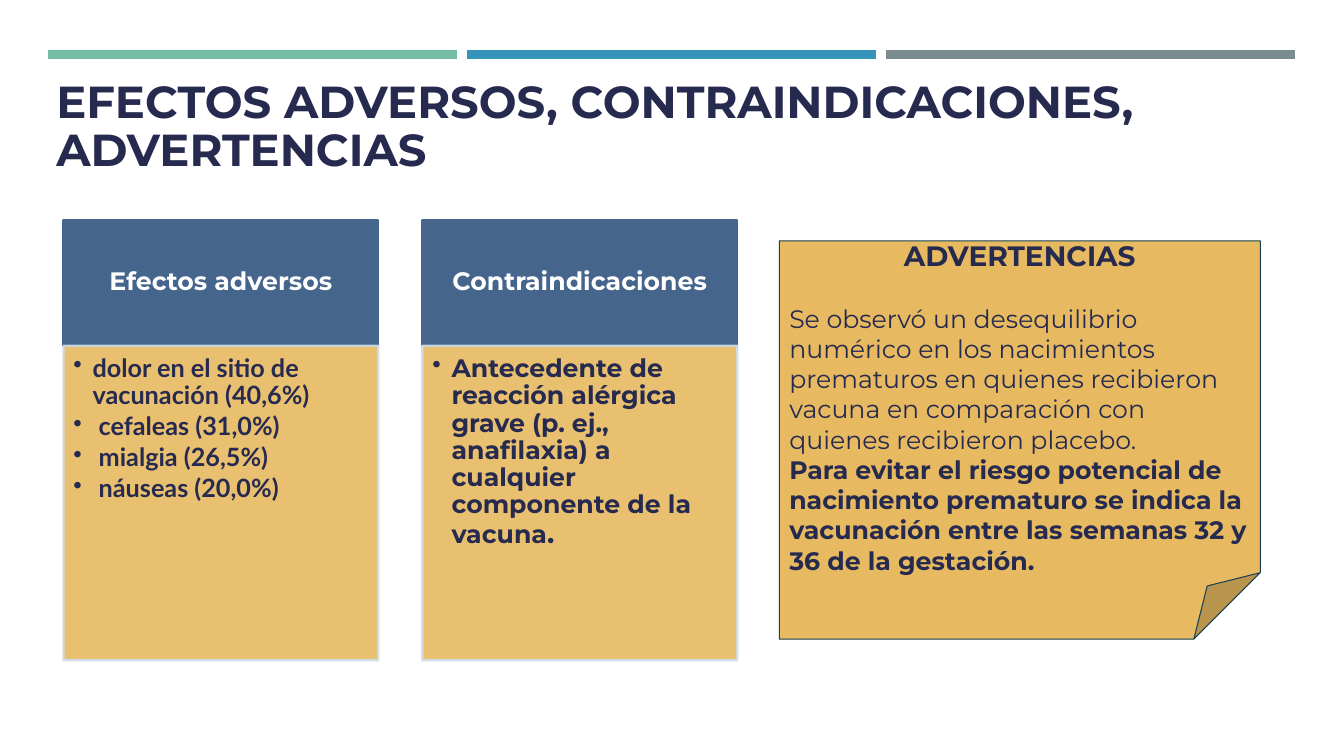
from dataclasses import dataclass

from lxml import etree
from pptx import Presentation
from pptx.dml.color import RGBColor
from pptx.enum.shapes import MSO_CONNECTOR, MSO_SHAPE
from pptx.enum.text import MSO_ANCHOR, PP_ALIGN
from pptx.oxml.ns import qn
from pptx.util import Inches, Pt

STRAIGHT = MSO_CONNECTOR.STRAIGHT
RECTANGLE = MSO_SHAPE.RECTANGLE
FOLDED_CORNER = MSO_SHAPE.FOLDED_CORNER
TOP, MIDDLE = MSO_ANCHOR.TOP, MSO_ANCHOR.MIDDLE
LEFT, CENTER = PP_ALIGN.LEFT, PP_ALIGN.CENTER


@dataclass(frozen=True)
class Theme:
    ink: str = "262A4F"
    white: str = "FFFFFF"
    header: str = "45658D"
    sand: str = "E7BA61"
    card_edge: str = "CEDCE7"
    note_edge: str = "174152"
    bars: tuple = ("75BDA7", "3494BA", "7A8C8E")
    font: str = "Montserrat"
    list_font: str = "Lato"
    title_size: int = 32
    lead_size: int = 20
    body_size: int = 18


THEME = Theme()

TITLE = "EFECTOS ADVERSOS, CONTRAINDICACIONES, ADVERTENCIAS"
CARDS = [
    ("Efectos adversos", THEME.list_font, [
        [("dolor en el sitio de vacunación (40,6%)", THEME.body_size)],
        [(" cefaleas (31,0%)", THEME.body_size)],
        [(" mialgia (26,5%)", THEME.body_size)],
        [(" náuseas (20,0%)", THEME.body_size)],
    ]),
    ("Contraindicaciones", THEME.font, [
        [("Antecedente de reacción alérgica grave (p. ej., anafilaxia) "
          "a cualquier componente de la vacuna", THEME.body_size),
         (".", THEME.lead_size)],
    ]),
]
WARNING_TITLE = "ADVERTENCIAS"
WARNING_FINDING = ("Se observó un desequilibrio numérico en los nacimientos prematuros en quienes "
                   "recibieron vacuna en comparación con quienes recibieron placebo.")
WARNING_ADVICE = ("Para evitar el riesgo potencial de nacimiento prematuro se indica la "
                  "vacunación entre las semanas 32 y 36 de la gestación.")


def color(value):
    return RGBColor.from_string(value)


def set_alpha(solid_fill, percent):
    alpha = etree.SubElement(solid_fill[0], qn("a:alpha"))
    alpha.set("val", str(percent * 1000))


def add_panel(page, kind, box, fill, edge, edge_width, opacity=100):
    panel = page.shapes.add_shape(kind, *map(Inches, box))
    panel.shadow.inherit = False
    panel.fill.solid()
    panel.fill.fore_color.rgb = color(fill)
    panel.line.color.rgb = color(edge)
    panel.line.width = Pt(edge_width)
    if opacity < 100:
        for solid_fill in panel.element.spPr.iter(qn("a:solidFill")):
            set_alpha(solid_fill, opacity)
    return panel


def setup_frame(shape, anchor, margins):
    frame = shape.text_frame
    frame.word_wrap = True
    frame.vertical_anchor = anchor
    (frame.margin_left, frame.margin_top,
     frame.margin_right, frame.margin_bottom) = map(Inches, margins)
    return frame


def add_para(frame, align=LEFT, line_spacing=1.0, space_after=0):
    first = frame.paragraphs[0]
    para = frame.add_paragraph() if first.runs else first
    para.alignment = align
    para.line_spacing = line_spacing
    para.space_after = Pt(space_after)
    return para


def add_span(para, text, size, bold=True, ink=THEME.ink, font=THEME.font):
    span = para.add_run()
    span.text = text
    span.font.size = Pt(size)
    span.font.bold = bold
    span.font.name = font
    span.font.color.rgb = color(ink)


def add_bullet(para, indent):
    properties = para._p.get_or_add_pPr()
    properties.set("marL", str(Inches(indent)))
    properties.set("indent", str(-Inches(indent)))
    etree.SubElement(properties, qn("a:buChar")).set("char", "•")


def add_top_bars(page, box):
    left, top, width, height = box
    gap = 0.1
    bar_width = (width - gap * (len(THEME.bars) - 1)) / len(THEME.bars)
    middle = Inches(top + height / 2)
    for index, bar_color in enumerate(THEME.bars):
        start = left + index * (bar_width + gap)
        bar = page.shapes.add_connector(
            STRAIGHT, Inches(start), middle, Inches(start + bar_width), middle)
        bar.line.color.rgb = color(bar_color)
        bar.line.width = Inches(height)
        etree.SubElement(bar.element.spPr, qn("a:effectLst"))


def add_title(page, box):
    title = page.shapes.add_textbox(*map(Inches, box))
    frame = setup_frame(title, MIDDLE, (0.1, 0.05, 0.1, 0.05))
    add_span(add_para(frame, line_spacing=0.9), TITLE, THEME.title_size)


def add_card(page, box, heading, font, items):
    left, top, width, height = box
    header_height = 1.25
    header = add_panel(page, RECTANGLE, (left, top, width, header_height),
                       THEME.header, THEME.header, 1.75)
    frame = setup_frame(header, MIDDLE, (0.14, 0.08, 0.14, 0.08))
    add_span(add_para(frame, CENTER, 0.9), heading, THEME.body_size, ink=THEME.white)

    body_box = (left, top + header_height, width, height - header_height)
    body = add_panel(page, RECTANGLE, body_box, THEME.sand, THEME.card_edge, 1.75, opacity=90)
    frame = setup_frame(body, TOP, (0.1, 0.1, 0.14, 0.16))
    for item in items:
        para = add_para(frame, line_spacing=0.9, space_after=2.7)
        add_bullet(para, 0.19)
        for text, size in item:
            add_span(para, text, size, font=font)


def add_cards(page, box):
    left, top, width, height = box
    gap = 0.44
    card_width = (width - gap * (len(CARDS) - 1)) / len(CARDS)
    for index, card in enumerate(CARDS):
        card_left = left + index * (card_width + gap)
        add_card(page, (card_left, top, card_width, height), *card)


def add_warning(page, box):
    note = add_panel(page, FOLDED_CORNER, box, THEME.sand, THEME.note_edge, 0.75)
    frame = setup_frame(note, MIDDLE, (0.1, 0.05, 0.1, 0.05))
    add_span(add_para(frame, CENTER, space_after=22), WARNING_TITLE, THEME.lead_size)
    add_span(add_para(frame), WARNING_FINDING, THEME.body_size, bold=False)
    add_span(add_para(frame), WARNING_ADVICE, THEME.body_size)


def main():
    deck = Presentation()
    deck.slide_width, deck.slide_height = Inches(13.33), Inches(7.5)
    page = deck.slides.add_slide(deck.slide_layouts[6])
    add_top_bars(page, (0.48, 0.495, 12.36, 0.09))
    add_cards(page, (0.63, 2.18, 6.68, 4.37))
    add_warning(page, (7.73, 2.39, 4.77, 3.95))
    add_title(page, (0.46, 0.99, 12.42, 0.56))
    deck.save("out.pptx")


if __name__ == "__main__":
    main()
